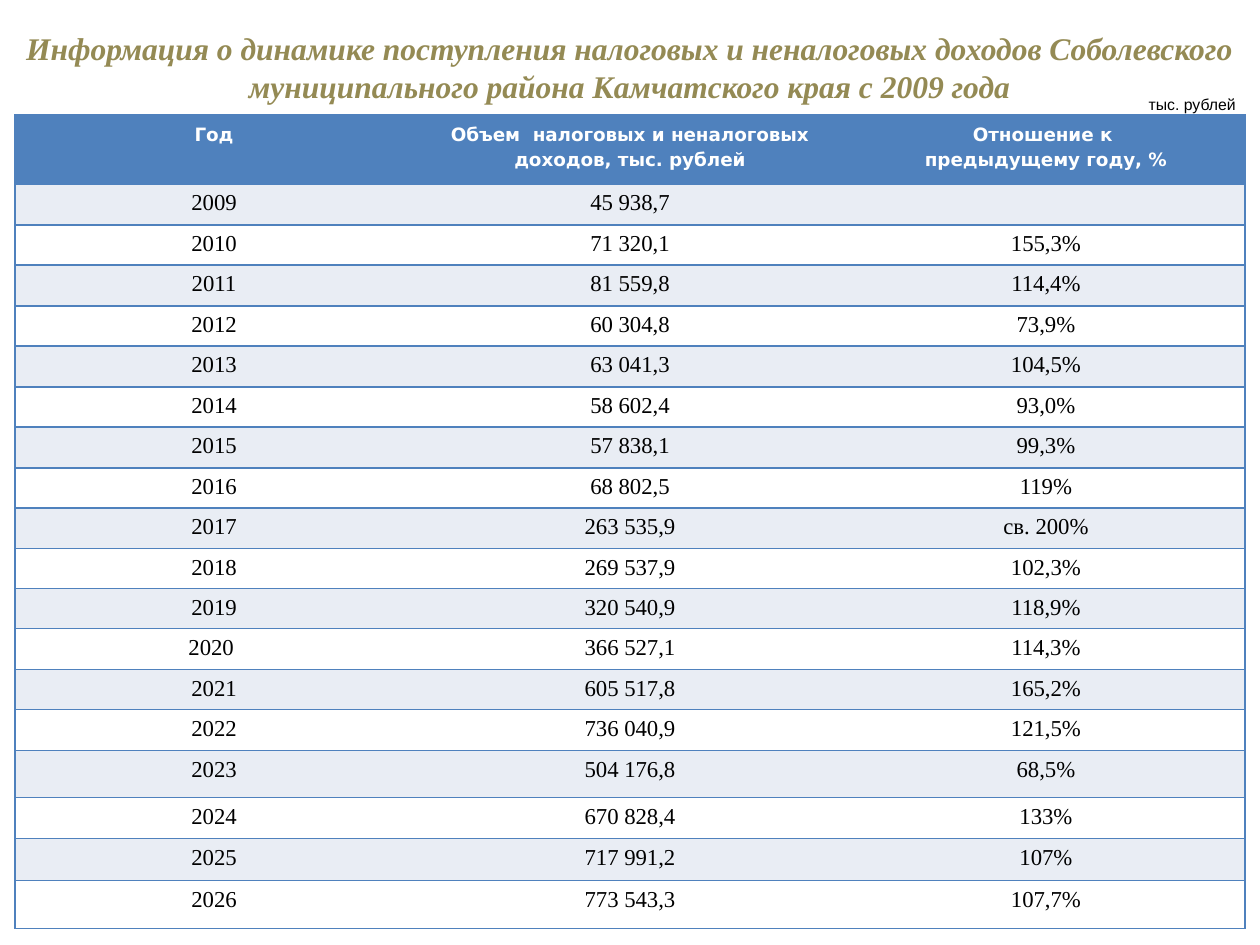
"""Build a slide with a table of district revenue by year."""
from dataclasses import dataclass
from itertools import pairwise

from lxml.etree import SubElement
from pptx import Presentation
from pptx.dml.color import RGBColor
from pptx.enum.text import MSO_ANCHOR, MSO_AUTO_SIZE, PP_ALIGN
from pptx.oxml.ns import qn
from pptx.util import Emu, Pt

PX = 914400 // 126
COLORS = {"blue": "4F81BD", "band": "E9EDF4", "white": "FFFFFF", "black": "000000", "olive": "948A54"}


@dataclass(frozen=True)
class Style:
    font: str
    size: float
    color: str
    bold: bool = False
    italic: bool = False
    align: PP_ALIGN = PP_ALIGN.CENTER
    spacing: float = 1.0


@dataclass(frozen=True)
class Box:
    left: int
    top: int
    width: int
    height: int


TITLE = Style("Times New Roman", 18, "olive", bold=True, italic=True)
UNIT = Style("Arial", 9, "black", align=PP_ALIGN.RIGHT)
HEADER = Style("DejaVu Sans", 10.5, "white", bold=True, spacing=1.15)
BODY = Style("Times New Roman", 13, "black")

COLUMN_WIDTHS = (398, 434, 398)
ROW_EDGES = (115, 184, 225, 265, 306, 346, 387, 427, 468, 508,
             549, 589, 629, 670, 710, 751, 798, 839, 881, 929)
ROWS = (
    ("Год", "Объем  налоговых и неналоговых доходов, тыс. рублей", "Отношение к \nпредыдущему году, %"),
    ("2009", "45 938,7", ""),
    ("2010", "71 320,1", "155,3%"),
    ("2011", "81 559,8", "114,4%"),
    ("2012", "60 304,8", "73,9%"),
    ("2013", "63 041,3", "104,5%"),
    ("2014", "58 602,4", "93,0%"),
    ("2015", "57 838,1", "99,3%"),
    ("2016", "68 802,5", "119%"),
    ("2017", "263 535,9", "св. 200%"),
    ("2018", "269 537,9", "102,3%"),
    ("2019", "320 540,9", "118,9%"),
    ("2020 ", "366 527,1", "114,3%"),
    ("2021", "605 517,8", "165,2%"),
    ("2022", "736 040,9", "121,5%"),
    ("2023", "504 176,8", "68,5%"),
    ("2024", "670 828,4", "133%"),
    ("2025", "717 991,2", "107%"),
    ("2026", "773 543,3", "107,7%"),
)


def px(length: int) -> Emu:
    """Turn pixels into EMU."""
    return Emu(length * PX)


def set_attributes(target, values: dict) -> None:
    """Set each named attribute of the target."""
    for name, value in values.items():
        setattr(target, name, value)


def write_text(text_frame, text: str, style: Style) -> None:
    """Write the text in one style, a paragraph for each line."""
    text_frame.text = text
    for paragraph in text_frame.paragraphs:
        set_attributes(paragraph, {"alignment": style.align, "line_spacing": style.spacing})
        for run in paragraph.runs:
            set_attributes(run.font, {"name": style.font, "size": Pt(style.size),
                                      "bold": style.bold, "italic": style.italic})
            run.font.color.rgb = RGBColor.from_string(COLORS[style.color])
        if not paragraph.runs:
            SubElement(paragraph._p, qn("a:endParaRPr"), sz=str(int(style.size * 100)))


def place(shape, box: Box) -> None:
    """Move and size a shape."""
    set_attributes(shape, {"left": px(box.left), "top": px(box.top),
                           "width": px(box.width), "height": px(box.height)})


def add_borders(cell, visible: dict[str, bool]) -> None:
    """Draw the visible sides of a cell and clear the others."""
    properties = cell._tc.get_or_add_tcPr()
    for side, shown in visible.items():
        line = SubElement(properties, qn(f"a:ln{side}"), w=str(Pt(1)))
        fill = SubElement(line, qn("a:solidFill" if shown else "a:noFill"))
        if shown:
            SubElement(fill, qn("a:srgbClr"), val=COLORS["blue"])


def add_revenue_table(slide, left: int) -> None:
    """Add the banded revenue table."""
    frame = slide.shapes.add_table(len(ROWS), len(COLUMN_WIDTHS), px(left), px(ROW_EDGES[0]),
                                   px(sum(COLUMN_WIDTHS)), px(ROW_EDGES[-1] - ROW_EDGES[0]))
    table = frame.table
    for column, width in zip(table.columns, COLUMN_WIDTHS):
        column.width = px(width)
    for row, (top, bottom) in zip(table.rows, pairwise(ROW_EDGES)):
        row.height = px(bottom - top)
    last_column = len(COLUMN_WIDTHS) - 1
    for row_index, values in enumerate(ROWS):
        fill = "blue" if row_index == 0 else ("white", "band")[row_index % 2]
        for column_index, value in enumerate(values):
            cell = table.cell(row_index, column_index)
            write_text(cell.text_frame, value, BODY if row_index else HEADER)
            add_borders(cell, {"L": column_index == 0, "R": column_index == last_column,
                               "T": True, "B": True})
            cell.fill.solid()
            cell.fill.fore_color.rgb = RGBColor.from_string(COLORS[fill])


def main() -> None:
    """Build and save the presentation."""
    presentation = Presentation()
    set_attributes(presentation, {"slide_width": px(1260), "slide_height": px(945)})
    slide = presentation.slides.add_slide(presentation.slide_layouts[5])

    title = slide.shapes.title
    place(title, Box(-134, 16, 1429, 59))
    set_attributes(title.text_frame, {"word_wrap": True, "auto_size": MSO_AUTO_SIZE.NONE,
                                      "vertical_anchor": MSO_ANCHOR.TOP,
                                      "margin_left": px(111), "margin_top": px(13)})
    write_text(title.text_frame, "Информация о динамике поступления налоговых и неналоговых доходов "
               "Соболевского муниципального района Камчатского края с 2009 года", TITLE)

    add_revenue_table(slide, 15)

    unit = slide.shapes.add_textbox(0, 0, 0, 0)
    place(unit, Box(1135, 89, 113, 32))
    unit.text_frame.word_wrap = False
    write_text(unit.text_frame, "тыс. рублей", UNIT)

    presentation.save("out.pptx")


if __name__ == "__main__":
    main()
